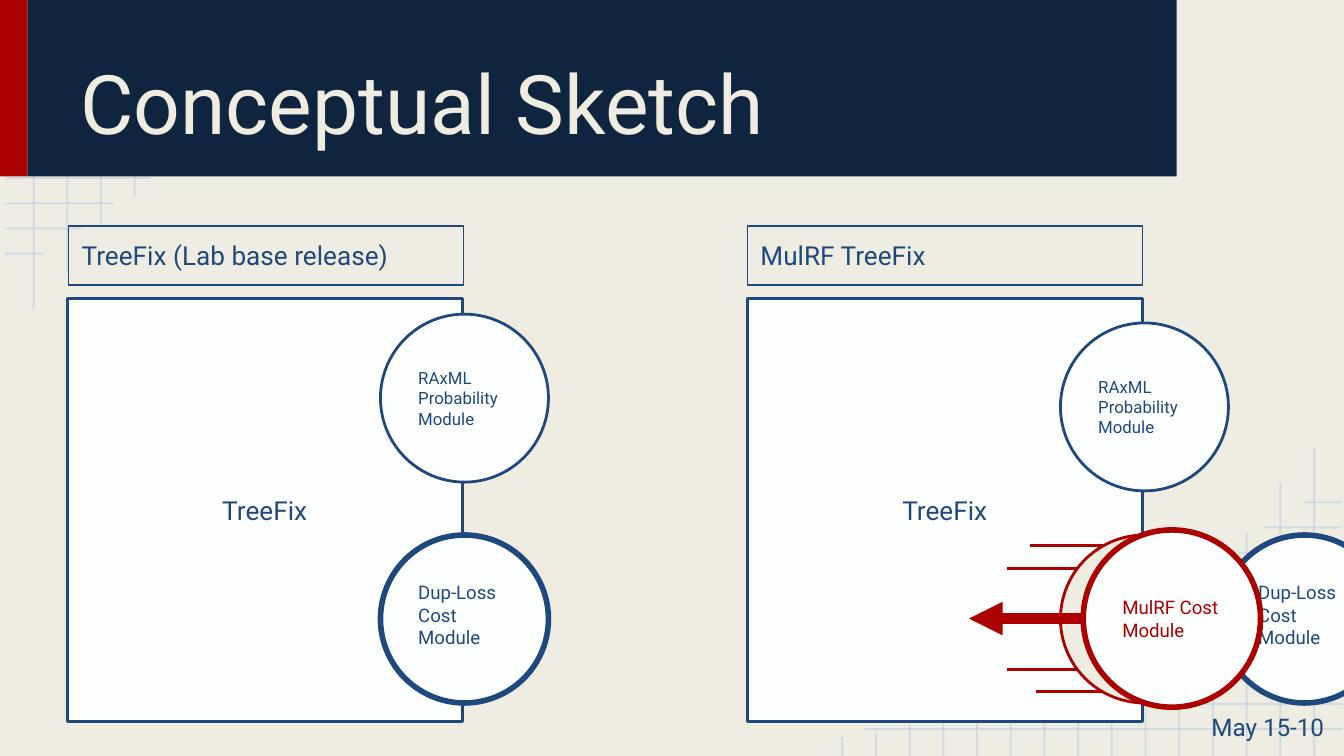
from lxml import etree
from pptx import Presentation
from pptx.dml.color import RGBColor
from pptx.enum.shapes import MSO_CONNECTOR, MSO_SHAPE
from pptx.enum.text import MSO_ANCHOR, PP_ALIGN
from pptx.oxml.ns import qn
from pptx.util import Pt

RECT, OVAL = MSO_SHAPE.RECTANGLE, MSO_SHAPE.OVAL
STRAIGHT = MSO_CONNECTOR.STRAIGHT
TOP, MIDDLE, BOTTOM = MSO_ANCHOR.TOP, MSO_ANCHOR.MIDDLE, MSO_ANCHOR.BOTTOM
LEFT, CENTER, RIGHT = PP_ALIGN.LEFT, PP_ALIGN.CENTER, PP_ALIGN.RIGHT

COLORS = {
    "cream": "EFEDE2", "navy": "0F243E", "red": "AB0101",
    "blue": "1F497D", "white": "FDFFFF", "pale": "B7CCE4",
}
FONT = "Roboto"
WIDE, HIGH = 720, 405
INSET = 7.2
DISC = 90

# Lengths of the background grid lines, from the corner outward
ROWS = [258.5, 212.4, 173.5, 149, 120.2, 98.6, 80.6, 61.2, 44.6, 23]
COLS = [165.6, 146.2, 119.5, 104.4, 92.9, 83.5, 71.3, 61.9,
        51.8, 44.6, 34.6, 23.8, 17.3, 12.2, 10.1]


def color(name):
    return RGBColor.from_string(COLORS[name])


def write(shape, text, size, ink, align=LEFT, anchor=MIDDLE, foot=INSET):
    frame = shape.text_frame
    frame.word_wrap = True
    frame.vertical_anchor = anchor
    frame.margin_left = frame.margin_right = frame.margin_top = Pt(INSET)
    frame.margin_bottom = Pt(foot)
    para = frame.paragraphs[0]
    para.alignment = align
    run = para.add_run()
    run.text = text
    run.font.name = FONT
    run.font.size = Pt(size)
    run.font.color.rgb = color(ink)


def add_box(slide, kind, x, y, w, h, fill=None, edge=None, width=1.5):
    shape = slide.shapes.add_shape(kind, Pt(x), Pt(y), Pt(w), Pt(h))
    shape.shadow.inherit = False
    if fill:
        shape.fill.solid()
        shape.fill.fore_color.rgb = color(fill)
    else:
        shape.fill.background()
    if edge:
        shape.line.color.rgb = color(edge)
        shape.line.width = Pt(width)
    else:
        shape.line.fill.background()
    return shape


def add_text(slide, x, y, w, h, *words, **style):
    box = slide.shapes.add_textbox(Pt(x), Pt(y), Pt(w), Pt(h))
    write(box, *words, **style)


def add_line(slide, x1, y1, x2, y2, ink, width, alpha=None, arrow=False):
    line = slide.shapes.add_connector(STRAIGHT, Pt(x1), Pt(y1), Pt(x2), Pt(y2))
    line.line.color.rgb = color(ink)
    line.line.width = Pt(width)
    props = line._element.spPr
    if alpha:
        tint = props.find(".//" + qn("a:srgbClr"))
        etree.SubElement(tint, qn("a:alpha")).set("val", str(alpha * 1000))
    if arrow:
        ends = props.find(qn("a:ln"))
        etree.SubElement(ends, qn("a:tailEnd")).set("type", "triangle")
    etree.SubElement(props, qn("a:effectLst"))


def add_grid(slide, turn):
    """Draw a corner grid; turn maps top-left points to the wanted corner."""
    lines = []
    for i, reach in enumerate(ROWS):
        y = 14.4 + 13.5 * i
        lines.append(((2.9, y), (reach, y)))
    for i, reach in enumerate(COLS):
        x = 18 + 18.06 * i
        lines.append(((x, reach), (x, 0)))
    for start, end in lines:
        add_line(slide, *turn(*start), *turn(*end), "pale", 1, alpha=54)


def add_panel(slide, x):
    box = add_box(slide, RECT, x, 159.8, 211.7, 226.8, "white", "blue")
    write(box, "TreeFix", 14, "blue", CENTER)


def add_label(slide, x, text):
    box = add_box(slide, RECT, x, 121, 211.7, 31.7, None, "blue", 0.75)
    write(box, text, 14, "blue", anchor=TOP)


def add_raxml(slide, x, y):
    disc = add_box(slide, OVAL, x, y, DISC, DISC, "white", "blue")
    write(disc, "RAxML Probability Module", 9, "blue")


def add_duploss(slide, x):
    disc = add_box(slide, OVAL, x, 286.6, DISC, DISC, "white", "blue", 3)
    write(disc, "Dup-Loss Cost Module", 10, "blue", foot=11.7)


def add_dash(slide, x, y, length):
    add_line(slide, x, y, x - length, y, "red", 1.5)


def main():
    deck = Presentation()
    deck.slide_width, deck.slide_height = Pt(WIDE), Pt(HIGH)
    slide = deck.slides.add_slide(deck.slide_layouts[6])
    slide.background.fill.solid()
    slide.background.fill.fore_color.rgb = color("cream")

    # Background grids in opposite corners
    add_grid(slide, lambda x, y: (x, y))
    add_grid(slide, lambda x, y: (WIDE + 2 - x, HIGH - y))

    # Title band
    add_box(slide, RECT, 0, -0.5, 14.8, 95, "red")
    add_box(slide, RECT, 14.8, -0.5, 615.6, 95, "navy")
    add_text(slide, 36, 8, 576, 80, "Conceptual Sketch", 44, "cream",
             anchor=BOTTOM)

    # Module pushed out, then both main panels
    add_duploss(slide, 653.8)
    for x in (36, 400.3):
        add_panel(slide, x)

    # New module moving in
    for y in (304.4, 358.7):
        add_dash(slide, 578.9, y, 39.5)
    add_box(slide, OVAL, 568.1, 286.6, DISC, DISC, "cream", "red")
    add_line(slide, 580.3, 331.4, 519.1, 331.4, "red", 6, arrow=True)
    disc = add_box(slide, OVAL, 580.3, 283.9, 95, 95, "white", "red", 3)
    write(disc, "MulRF Cost Module", 10, "red")

    # Remaining modules and headings
    add_raxml(slide, 203.8, 168.3)
    add_raxml(slide, 568.1, 173)
    add_label(slide, 36.7, "TreeFix (Lab base release)")
    add_label(slide, 400.3, "MulRF TreeFix")
    add_dash(slide, 591.1, 370.5, 36)
    add_dash(slide, 591.1, 292.4, 39.5)

    # Footer and base module
    add_text(slide, 632.9, 373.9, 83.5, 31, "May 15-10", 13, "blue",
             align=RIGHT)
    add_duploss(slide, 203.8)

    deck.save("out.pptx")


if __name__ == "__main__":
    main()
